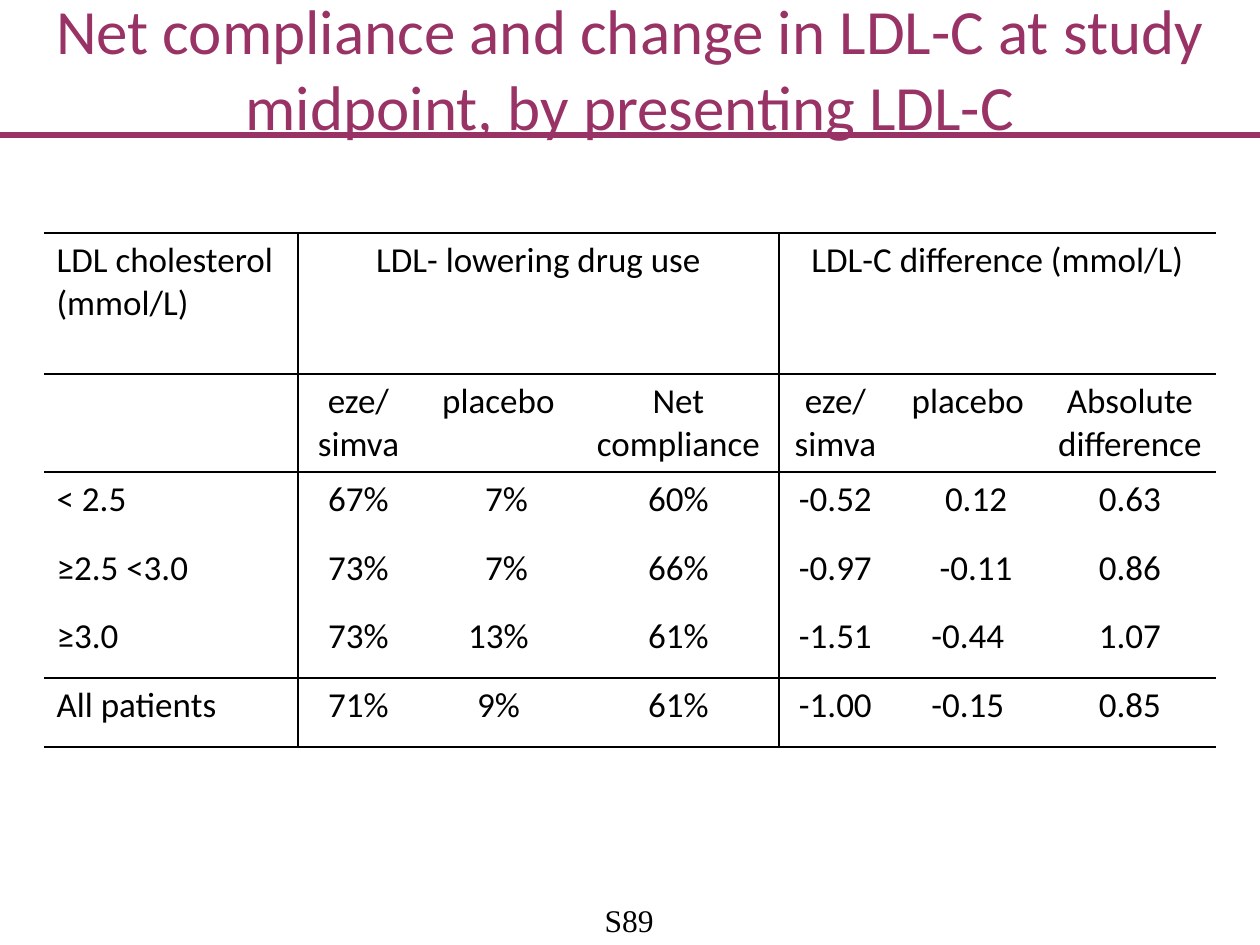
from lxml import etree
from pptx import Presentation
from pptx.dml.color import RGBColor
from pptx.enum.shapes import MSO_CONNECTOR
from pptx.enum.text import MSO_ANCHOR, PP_ALIGN
from pptx.oxml.ns import qn
from pptx.util import Emu, Pt

STRAIGHT = MSO_CONNECTOR.STRAIGHT
LEFT, CENTER = PP_ALIGN.LEFT, PP_ALIGN.CENTER
TOP, MIDDLE = MSO_ANCHOR.TOP, MSO_ANCHOR.MIDDLE

PLUM, BLACK = "993366", "000000"
SANS, SERIF = "Calibri", "Times New Roman"

COLS = [254, 121, 159, 201, 113, 152, 172]
ROWS = [141, 98, 69, 68, 69, 69]
DATA = [
    ["LDL cholesterol (mmol/L)", "LDL- lowering drug use", "", "",
     "LDL-C difference (mmol/L)", "", ""],
    ["", "eze/\nsimva", "placebo", "Net compliance",
     "eze/\nsimva", "placebo", "Absolute difference"],
    ["< 2.5", "67%", "7%", "60%", "-0.52", "0.12", "0.63"],
    ["≥2.5 <3.0", "73%", "7%", "66%", "-0.97", "-0.11", "0.86"],
    ["≥3.0", "73%", "13%", "61%", "-1.51", "-0.44", "1.07"],
    ["All patients", "71%", "9%", "61%", "-1.00", "-0.15", "0.85"],
]
SPANS = [(0, 1, 3), (0, 4, 6)]
SHIFTED = {(2, 2), (3, 2), (2, 5), (3, 5)}
ROW_RULES = {0, 1, 2, 5, 6}
COL_RULES = {1, 4}


def px(n):
    return Emu(round(n * 914400 / 126))


def rgb(code):
    return RGBColor.from_string(code)


class Deck:
    def __init__(self, wide, high):
        self.prs = Presentation()
        self.prs.slide_width, self.prs.slide_height = px(wide), px(high)
        self.slide = self.prs.slides.add_slide(self.prs.slide_layouts[6])

    def style(self, frame, size, face, color, align):
        for para in frame.paragraphs:
            para.alignment = align
            for run in para.runs:
                run.font.size = Pt(size)
                run.font.name = face
                run.font.color.rgb = rgb(color)

    def text(self, words, box, size, face, color, anchor=TOP, inset=0, wrap=False):
        frame = self.slide.shapes.add_textbox(*map(px, box)).text_frame
        frame.margin_left = frame.margin_right = px(2 * inset)
        frame.margin_top = frame.margin_bottom = px(inset)
        frame.word_wrap = wrap
        frame.vertical_anchor = anchor
        frame.text = words
        self.style(frame, size, face, color, CENTER)

    def line(self, start, end, color, width):
        line = self.slide.shapes.add_connector(STRAIGHT, *map(px, start + end))
        line.line.color.rgb = rgb(color)
        line.line.width = Pt(width)
        etree.SubElement(line._element.spPr, qn("a:effectLst"))

    def edge(self, cell, side, drawn):
        props = cell._tc.get_or_add_tcPr()
        edge = etree.SubElement(props, qn("a:ln" + side), w=str(Pt(1)))
        if drawn:
            fill = etree.SubElement(edge, qn("a:solidFill"))
            etree.SubElement(fill, qn("a:srgbClr"), val=BLACK)
        else:
            etree.SubElement(edge, qn("a:noFill"))

    def table(self, left, top):
        box = map(px, (left, top, sum(COLS), sum(ROWS)))
        table = self.slide.shapes.add_table(len(ROWS), len(COLS), *box).table
        table.first_row = table.horz_banding = False
        for col, wide in zip(table.columns, COLS):
            col.width = px(wide)
        for row, high in zip(table.rows, ROWS):
            row.height = px(high)
        for r, c, last in SPANS:
            table.cell(r, c).merge(table.cell(r, last))
        for r, row in enumerate(DATA):
            for c, words in enumerate(row):
                cell = table.cell(r, c)
                self.edge(cell, "L", c in COL_RULES)
                self.edge(cell, "R", c + 1 in COL_RULES)
                self.edge(cell, "T", r in ROW_RULES)
                self.edge(cell, "B", r + 1 in ROW_RULES)
                cell.fill.background()
                if (r, c) in SHIFTED:
                    cell.margin_left = px(29)
                cell.text_frame.text = words
                self.style(cell.text_frame, 20, SANS, BLACK, CENTER if c else LEFT)


def main():
    deck = Deck(1260, 945)
    deck.line((0, 135), (1260, 135), PLUM, 3)
    deck.text("S89", (602, 901, 54, 38), 18, SERIF, BLACK)
    deck.text("Net compliance and change in LDL-C at study midpoint, by presenting LDL-C",
              (0, 0, 1260, 135), 36, SANS, PLUM, MIDDLE, 6, True)
    deck.table(44, 233)
    deck.prs.save("out.pptx")


if __name__ == "__main__":
    main()
